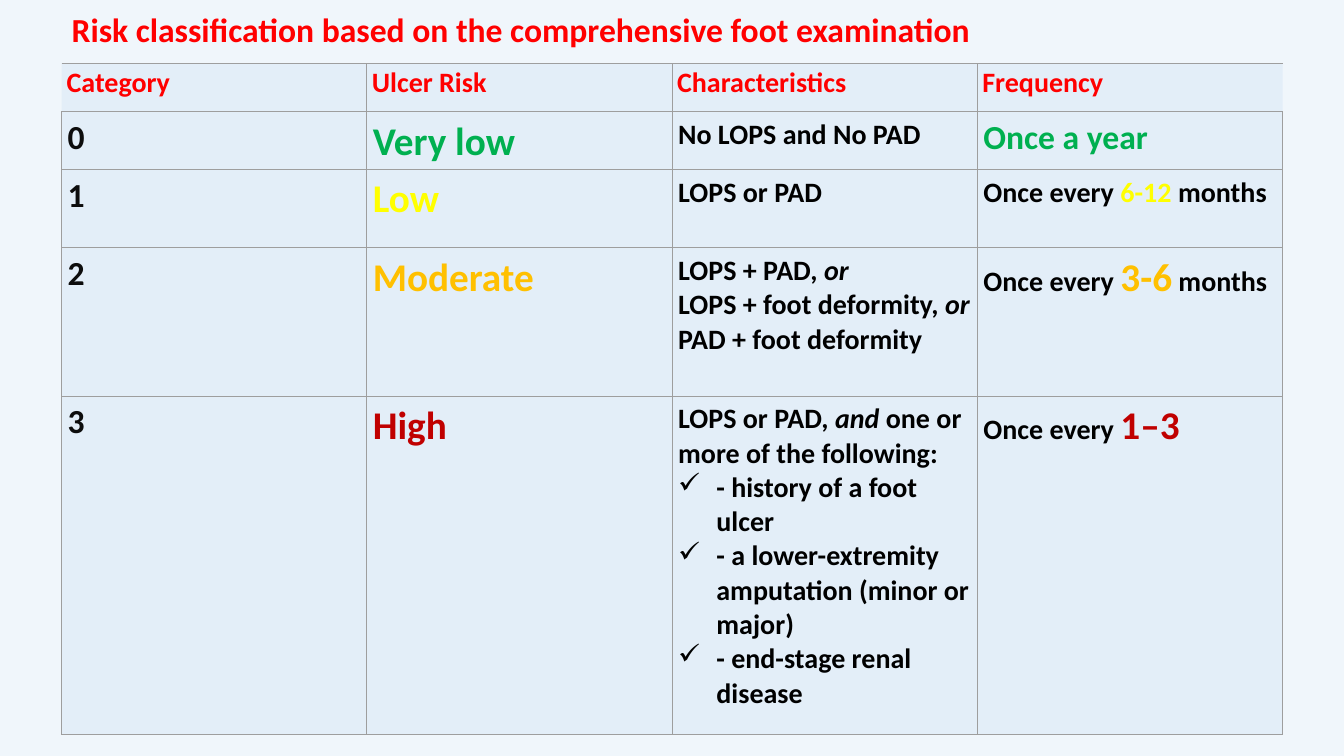
from dataclasses import dataclass

from lxml.etree import SubElement
from pptx import Presentation
from pptx.dml.color import RGBColor
from pptx.enum.text import MSO_ANCHOR, MSO_AUTO_SIZE, PP_ALIGN
from pptx.oxml.ns import qn
from pptx.util import Inches, Pt

SLIDE_WIDTH, SLIDE_HEIGHT = Inches(13.33), Inches(7.5)


@dataclass(frozen=True)
class Theme:
    """Colours, type sizes and line width used on the slide."""
    font: str = "Calibri"
    heading: str = "FF0000"
    ink: str = "000000"
    number: str = "0D0D0D"
    very_low: str = "00B050"
    low: str = "FFFF00"
    moderate: str = "FFC000"
    high: str = "C00000"
    panel: str = "DEEBF7"
    rule: str = "9E9E9E"
    rule_width: float = 0.75
    body_size: int = 20
    medium_size: int = 24
    large_size: int = 28


THEME = Theme()


@dataclass(frozen=True)
class Span:
    """A stretch of text with one format."""
    text: str
    color: str = THEME.ink
    size: int = THEME.body_size
    italic: bool = False


@dataclass(frozen=True)
class Line:
    """A paragraph made of spans."""
    spans: tuple[Span, ...]
    bullet: str = ""


@dataclass(frozen=True)
class Row:
    """A table row with its height as a percentage of the slide."""
    height: float
    cells: tuple[tuple[Line, ...], ...]
    margins: tuple[float, float, float]
    open_sides: bool = False


def across(percent: float) -> int:
    """Return a percentage of the slide width."""
    return int(SLIDE_WIDTH * percent / 100)


def down(percent: float) -> int:
    """Return a percentage of the slide height."""
    return int(SLIDE_HEIGHT * percent / 100)


def line(*spans: Span, bullet: str = "") -> Line:
    """Gather spans into a paragraph."""
    return Line(spans, bullet)


def header_row(*labels: str) -> Row:
    """Describe the heading row."""
    cells = tuple((line(Span(label, THEME.heading)),) for label in labels)
    return Row(6.4, cells, (0.05, 0.02, 0.02), open_sides=True)


def risk_row(height: float, category: str, risk: str, color: str,
             characteristics: tuple[Line, ...], frequency: Line, bottom: float = 0.02) -> Row:
    """Describe one risk category."""
    cells = (
        (line(Span(category, THEME.number, THEME.medium_size)),),
        (line(Span(risk, color, THEME.large_size)),),
        characteristics,
        (frequency,),
    )
    return Row(height, cells, (0.06, 0.06, bottom))


ROWS = (
    header_row("Category", "Ulcer Risk", "Characteristics", "Frequency"),
    risk_row(7.6, "0", "Very low", THEME.very_low,
             (line(Span("No LOPS and No PAD")),),
             line(Span("Once a year", THEME.very_low, THEME.medium_size))),
    risk_row(10.4, "1", "Low", THEME.low,
             (line(Span("LOPS or PAD")),),
             line(Span("Once every "), Span("6-12 ", THEME.low), Span("months"))),
    risk_row(19.6, "2", "Moderate", THEME.moderate,
             (line(Span("LOPS + PAD, "), Span("or", italic=True)),
              line(Span("LOPS + foot deformity, "), Span("or", italic=True)),
              line(Span("PAD + foot deformity"))),
             line(Span("Once every "), Span("3-6", THEME.moderate, THEME.large_size),
                  Span(" months"))),
    risk_row(44.7, "3", "High", THEME.high,
             (line(Span("LOPS or PAD, "), Span("and", italic=True),
                   Span(" one or more of the following:")),
              *(line(Span(item), bullet="✓") for item in (
                  "- history of a foot ulcer",
                  "- a lower-extremity amputation (minor or major)",
                  "- end-stage renal disease"))),
             line(Span("Once every "), Span("1–3", THEME.high, THEME.large_size)),
             bottom=0.06),
)


def add_text(paragraph, text: str, *, color: str, size: int, italic: bool = False) -> None:
    """Add a bold run in the theme font to a paragraph."""
    run = paragraph.add_run()
    run.text = text
    run.font.name = THEME.font
    run.font.size = Pt(size)
    run.font.bold = True
    run.font.italic = italic
    run.font.color.rgb = RGBColor.from_string(color)


def fill_panel(fill, opacity: int) -> None:
    """Fill with the panel colour at a percentage of opacity."""
    fill.solid()
    fill.fore_color.rgb = RGBColor.from_string(THEME.panel)
    color = fill._xPr.find(qn("a:solidFill")).find(qn("a:srgbClr"))
    SubElement(color, qn("a:alpha"), val=str(opacity * 1000))


def set_borders(cell, hidden: set[str]) -> None:
    """Rule the sides of a cell except the hidden ones."""
    properties = cell._tc.get_or_add_tcPr()
    for side in "LRTB":
        border = SubElement(properties, qn(f"a:ln{side}"), w=str(Pt(THEME.rule_width)))
        if side in hidden:
            SubElement(border, qn("a:noFill"))
        else:
            solid = SubElement(border, qn("a:solidFill"))
            SubElement(solid, qn("a:srgbClr"), val=THEME.rule)


def set_bullet(paragraph, bullet: str) -> None:
    """Give a paragraph a hanging bullet."""
    properties = paragraph._p.get_or_add_pPr()
    indent = Inches(0.38)
    properties.set("marL", str(indent))
    properties.set("indent", str(-indent))
    SubElement(properties, qn("a:buChar"), char=bullet)


def write_cell(cell, lines: tuple[Line, ...], row: Row) -> None:
    """Write the paragraphs of a cell and set its margins."""
    side, top, bottom = (Inches(margin) for margin in row.margins)
    cell.margin_left = cell.margin_right = side
    cell.margin_top, cell.margin_bottom = top, bottom
    cell.vertical_anchor = MSO_ANCHOR.TOP
    frame = cell.text_frame
    for index, content in enumerate(lines):
        paragraph = frame.add_paragraph() if index else frame.paragraphs[0]
        if content.bullet:
            set_bullet(paragraph, content.bullet)
        for span in content.spans:
            add_text(paragraph, span.text, color=span.color, size=span.size, italic=span.italic)


def add_title(slide, text: str) -> None:
    """Place and format the title."""
    title = slide.shapes.title
    title.left, title.top = across(4.58), 0
    title.width, title.height = across(88.6), down(8.4)
    frame = title.text_frame
    frame.auto_size = MSO_AUTO_SIZE.NONE
    frame.vertical_anchor = MSO_ANCHOR.MIDDLE
    paragraph = frame.paragraphs[0]
    paragraph.alignment = PP_ALIGN.LEFT
    paragraph.line_spacing = 0.9
    add_text(paragraph, text, color=THEME.heading, size=THEME.medium_size)


def add_risk_table(slide, rows: tuple[Row, ...]) -> None:
    """Draw the risk table."""
    column_count = len(rows[0].cells)
    height = sum(row.height for row in rows)
    table = slide.shapes.add_table(len(rows), column_count, across(4.58), down(8.4),
                                   across(90.85), down(height)).table
    table.first_row = table.horz_banding = False
    for row_index, row in enumerate(rows):
        table.rows[row_index].height = down(row.height)
        for column_index, lines in enumerate(row.cells):
            cell = table.cell(row_index, column_index)
            outer_sides = {0: {"L"}, column_count - 1: {"R"}}.get(column_index, set())
            set_borders(cell, outer_sides if row.open_sides else set())
            fill_panel(cell.fill, 71)
            write_cell(cell, lines, row)


def main() -> None:
    """Build and save the presentation."""
    presentation = Presentation()
    presentation.slide_width, presentation.slide_height = SLIDE_WIDTH, SLIDE_HEIGHT
    slide = presentation.slides.add_slide(presentation.slide_layouts.get_by_name("Title Only"))
    fill_panel(slide.background.fill, 44)
    add_title(slide, "Risk classification based on the comprehensive foot examination")
    add_risk_table(slide, ROWS)
    presentation.save("out.pptx")


if __name__ == "__main__":
    main()
